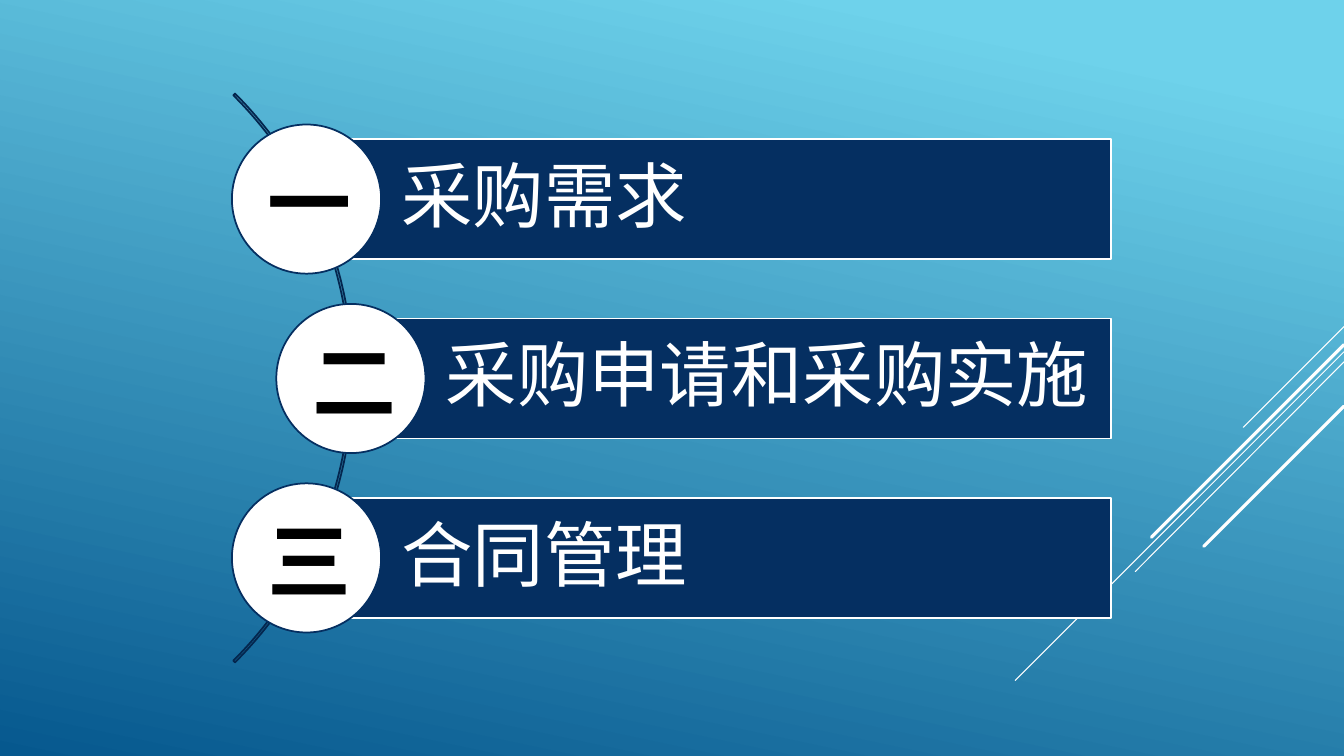
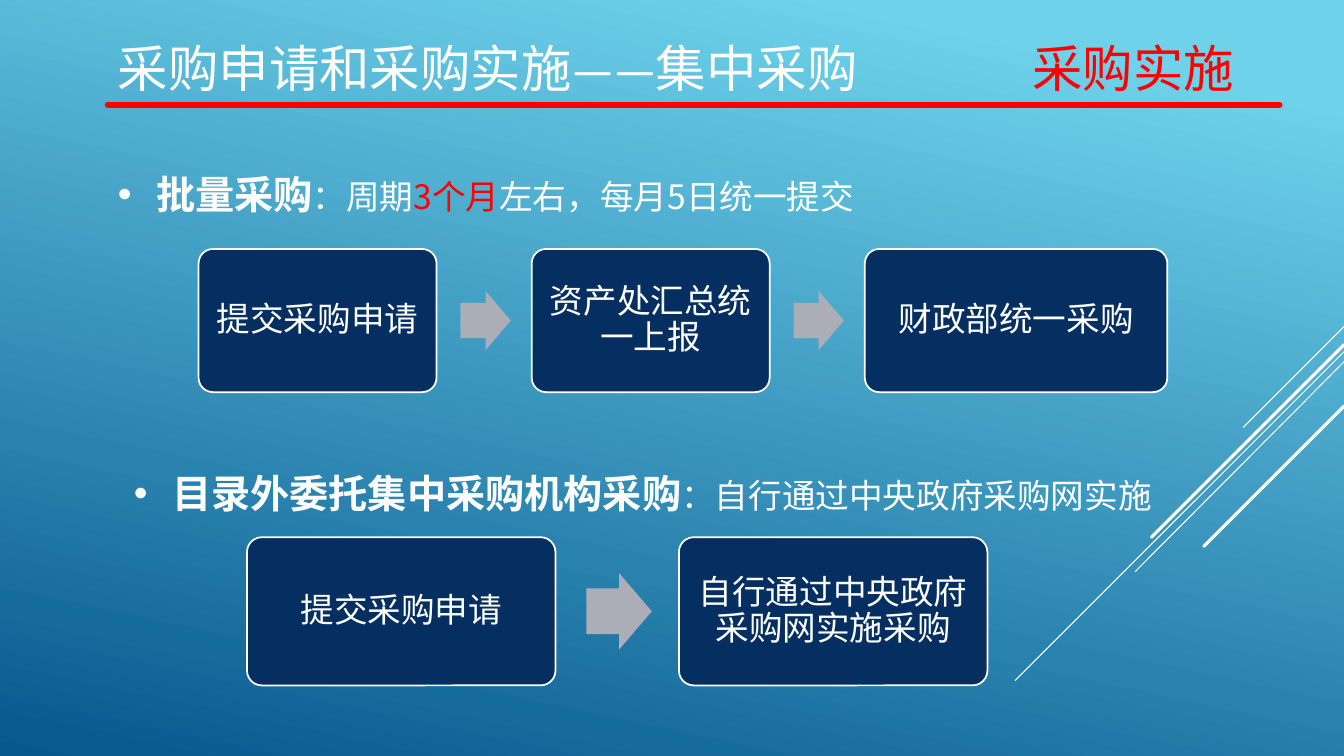
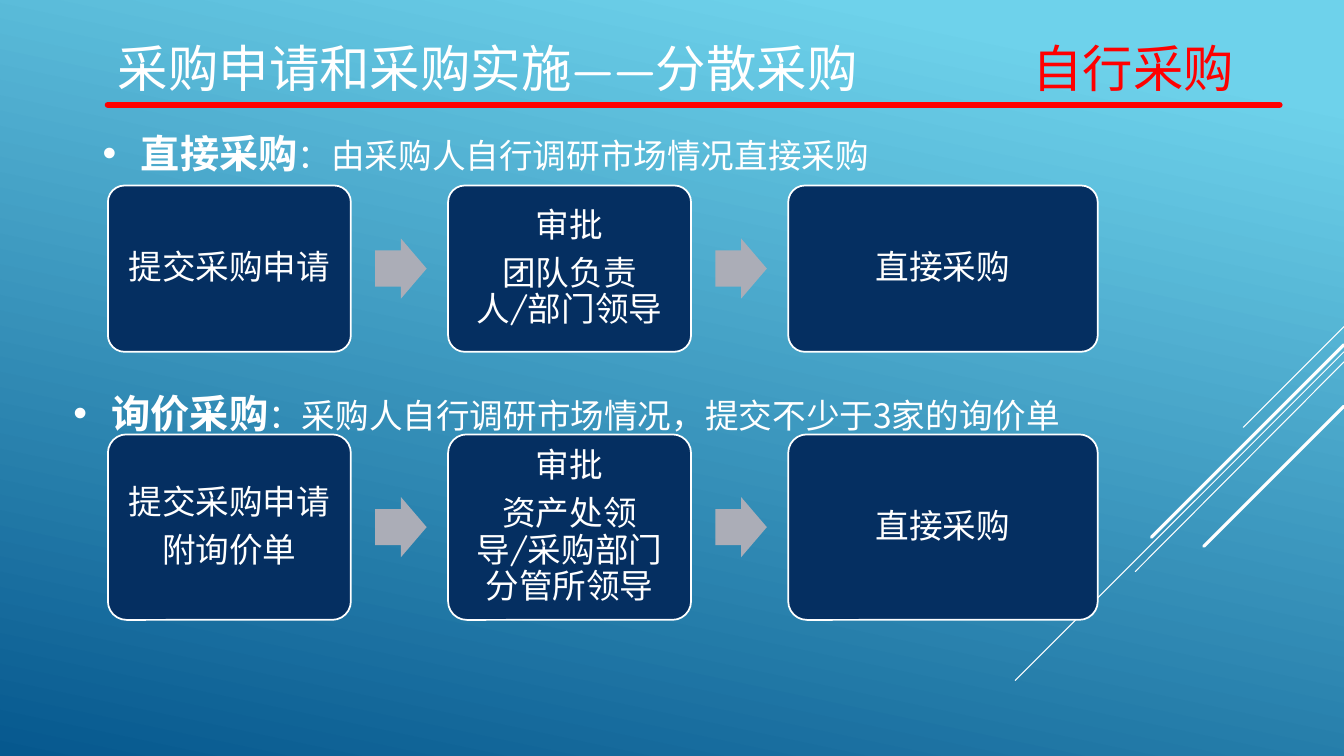
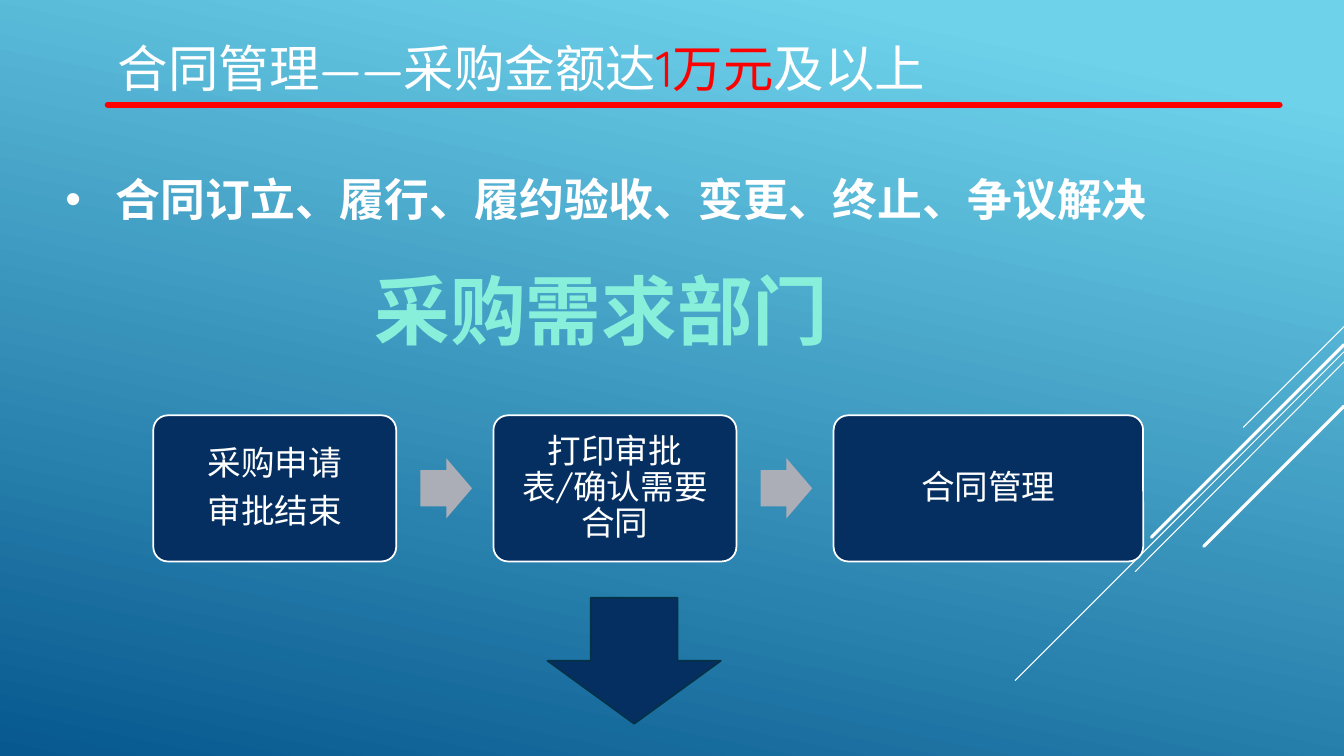
from lxml import etree
from pptx import Presentation
from pptx.dml.color import RGBColor
from pptx.enum.shapes import MSO_CONNECTOR, MSO_SHAPE
from pptx.enum.text import MSO_ANCHOR, MSO_AUTO_SIZE, PP_ALIGN
from pptx.oxml.ns import qn
from pptx.util import Pt

PX = 9144  # 100 px to the inch
WIDTH, HEIGHT = 1333, 750
HEADING_FONT, BODY_FONT = "Quicksand", "Noto Sans CJK SC"
COLORS = {
    "sky": "6ED2EB", "deep": "06588E", "navy": "052F61", "arc": "04264E",
    "white": "FFFFFF", "black": "000000", "red": "FF0000",
    "grey": "ABADB7", "mint": "87EFDA", "edge": "043148",
}
LEFT, CENTER, JUSTIFY = PP_ALIGN.LEFT, PP_ALIGN.CENTER, PP_ALIGN.JUSTIFY
TOP, MIDDLE = MSO_ANCHOR.TOP, MSO_ANCHOR.MIDDLE
STRAIGHT = MSO_CONNECTOR.STRAIGHT
GROW = MSO_AUTO_SIZE.SHAPE_TO_FIT_TEXT
RECT, ROUNDED, OVAL = MSO_SHAPE.RECTANGLE, MSO_SHAPE.ROUNDED_RECTANGLE, MSO_SHAPE.OVAL
ARC = MSO_SHAPE.BLOCK_ARC
RIGHT_ARROW, DOWN_ARROW = MSO_SHAPE.RIGHT_ARROW, MSO_SHAPE.DOWN_ARROW

# start y, end x, end y, weight; all begin at the right edge
RAYS = [(324, 1233, 424, 0.75), (349, 1007, 675, 0.75), (359, 1126, 567, 0.75),
        (342, 1142, 533, 2.25), (403, 1194, 542, 2.25)]


def emu(*lengths):
    return [round(length * PX) for length in lengths]


def rgb(name):
    return RGBColor.from_string(COLORS[name])


def write(shape, *paragraphs, size, color="white", bold=False, font=HEADING_FONT,
          align=LEFT, anchor=TOP, insets=(10, 5, 10, 5), spacing=None, after=0,
          bullet=0, tab=0, wrap=True, grow=False):
    """Each paragraph is a string or a list of runs; a run is a string or (string, changes)."""
    frame = shape.text_frame
    frame.word_wrap = wrap
    frame.vertical_anchor = anchor
    if grow:
        frame.auto_size = GROW
    (frame.margin_left, frame.margin_top,
     frame.margin_right, frame.margin_bottom) = emu(*insets)
    for index, runs in enumerate(paragraphs):
        paragraph = frame.add_paragraph() if index else frame.paragraphs[0]
        paragraph.alignment = align
        paragraph.space_after = Pt(after)
        if spacing:
            paragraph.line_spacing = spacing
        properties = paragraph._p.get_or_add_pPr()
        if bullet:
            properties.set("marL", str(bullet * PX))
            properties.set("indent", str(-bullet * PX))
            etree.SubElement(properties, qn("a:buFont"), typeface="Arial")
            etree.SubElement(properties, qn("a:buChar"), char="•")
        if tab:
            stops = etree.SubElement(properties, qn("a:tabLst"))
            etree.SubElement(stops, qn("a:tab"), pos=str(tab * PX), algn="l")
        for part in [runs] if isinstance(runs, str) else runs:
            words, changes = (part, {}) if isinstance(part, str) else part
            run = paragraph.add_run()
            run.text = words
            run.font.size = Pt(changes.get("size", size))
            run.font.bold = changes.get("bold", bold)
            run.font.color.rgb = rgb(changes.get("color", color))
            run.font.name = font
            etree.SubElement(run._r.get_or_add_rPr(), qn("a:ea"), typeface=font)


def add_text(slide, box, *paragraphs, **style):
    write(slide.shapes.add_textbox(*emu(*box)), *paragraphs, **style)


def add_shape(slide, kind, box, fill=None, line=None, adjustments=()):
    shape = slide.shapes.add_shape(kind, *emu(*box))
    shape.shadow.inherit = False
    for index, value in enumerate(adjustments):
        shape.adjustments[index] = value
    if fill:
        shape.fill.solid()
        shape.fill.fore_color.rgb = rgb(fill)
    else:
        shape.fill.background()
    if line:
        shape.line.color.rgb = rgb(line)
        shape.line.width = Pt(1.25)
    else:
        shape.line.fill.background()
    return shape


def add_line(slide, start, end, color, weight):
    connector = slide.shapes.add_connector(STRAIGHT, *emu(*start, *end))
    connector.line.color.rgb = rgb(color)
    connector.line.width = Pt(weight)
    connector.line._get_or_add_ln().set("cap", "rnd")
    etree.SubElement(connector._element.spPr, qn("a:effectLst"))


def paint_background(master):
    fill = master.background.fill
    fill.gradient()
    fill.gradient_angle = 258
    for stop, position, name in zip(fill.gradient_stops, (0.1, 1), ("sky", "deep")):
        stop.position = position
        stop.color.rgb = rgb(name)


def new_slide(prs, title=None):
    """Blank slide with the rays and, if given, a title over its red rule."""
    slide = prs.slides.add_slide(prs.slide_layouts[6])
    for y, end_x, end_y, weight in RAYS:
        add_line(slide, (WIDTH, y), (end_x, end_y), "white", weight)
    if title:
        add_text(slide, (107, 12, 1178, 109), title, size=36, anchor=MIDDLE, tab=907)
        add_line(slide, (107, 104), (1269, 104), "red", 4.5)
    return slide


def add_bullet(slide, box, runs, size=24, bold=False, indent=38):
    add_text(slide, box, runs, size=size, bold=bold, font=BODY_FONT, align=JUSTIFY,
             spacing=1.5, bullet=indent, grow=True)


def lead(words):
    return words, {"size": 28, "bold": True}


def red(words):
    return words, {"color": "red"}


def add_flow(slide, x, y, width, height, steps, last_width):
    """Row of step boxes; gaps and arrows are in proportion to the box width."""
    arrow_width, arrow_height = 0.212 * width, 0.248 * width
    for index, paragraphs in enumerate(steps):
        left = x + index * 1.4 * width
        is_last = index == len(steps) - 1
        step_width = last_width if is_last else width
        step = add_shape(slide, ROUNDED, (left, y, step_width, height),
                         "navy", "white", [0.1])
        write(step, *paragraphs, size=24, align=CENTER, anchor=MIDDLE,
              insets=(10, 10, 10, 10), spacing=0.9, after=8.4)
        if not is_last:
            arrow_top = y + (height - arrow_height) / 2
            add_shape(slide, RIGHT_ARROW,
                      (left + 1.1 * width, arrow_top, arrow_width, arrow_height),
                      "grey", adjustments=[0.6, 0.5])


def add_agenda(slide):
    bar_right, bar_height, diameter = 1102, 119, 148
    add_shape(slide, ARC, (-448, -24, 798, 798), line="arc", adjustments=[189, 27, 0.003])
    items = [("一", "采购需求", 304), ("二", "采购申请和采购实施", 348), ("三", "合同管理", 304)]
    for index, (numeral, topic, left) in enumerate(items):
        top = 138 + 178 * index
        bar = add_shape(slide, RECT, (left, top, bar_right - left, bar_height),
                        "navy", "white")
        write(bar, topic, size=51, anchor=MIDDLE, insets=(94, 14, 14, 14),
              spacing=0.9, after=17.85)
        circle_top = top + (bar_height - diameter) / 2
        add_shape(slide, OVAL, (left - diameter / 2, circle_top, diameter, diameter),
                  "white", "navy")
        add_text(slide, (left - 48, top + 6, 83, 111), numeral, size=60, color="black",
                 bold=True, grow=True)


def add_central_purchase(prs):
    slide = new_slide(prs, ["采购申请和采购实施——集中采购\t", red("采购实施")])
    add_bullet(slide, (107, 141, 821, 74),
               [lead("批量采购"), "：周期", red("3个月"), "左右，每月5日统一提交"])
    add_flow(slide, 197, 247, 236, 142,
             [["提交采购申请"], ["资产处汇总统一上报"], ["财政部统一采购"]], 300)
    add_bullet(slide, (123, 437, 1146, 74),
               [lead("目录外委托集中采购机构采购"), "：自行通过中央政府采购网实施"])
    add_flow(slide, 245, 533, 306, 147,
             [["提交采购申请"], ["自行通过中央政府采购网实施采购"]], 306)


def add_own_purchase(prs):
    slide = new_slide(prs, ["采购申请和采购实施——分散采购\t", red("自行采购")])
    add_bullet(slide, (92, 100, 821, 74),
               [lead("直接采购"), "：由采购人自行调研市场情况直接采购"])
    add_flow(slide, 107, 184, 241, 165,
             [["提交采购申请"], ["审批", "团队负责人/部门领导"], ["直接采购"]], 307)
    add_bullet(slide, (63, 358, 1146, 74),
               [lead("询价采购"), "：采购人自行调研市场情况，提交不少于3家的询价单"])
    add_flow(slide, 107, 431, 241, 184,
             [["提交采购申请", "附询价单"], ["审批", "资产处领导/采购部门分管所领导"],
              ["直接采购"]], 307)


def add_contract(prs):
    slide = new_slide(prs, ["合同管理——采购金额达", red("1万元"), "及以上"])
    add_bullet(slide, (55, 139, 1223, 83), "合同订立、履行、履约验收、变更、终止、争议解决",
               size=32, bold=True, indent=50)
    add_text(slide, (358, 257, 477, 101), "采购需求部门", size=54, color="mint", bold=True,
             align=CENTER, wrap=False, grow=True)
    add_flow(slide, 152, 412, 241, 145,
             [["采购申请", "审批结束"], ["打印审批表/确认需要合同"], ["合同管理"]], 307)
    add_shape(slide, DOWN_ARROW, (543, 593, 172, 125), "navy", "edge")


def main():
    prs = Presentation()
    prs.slide_width, prs.slide_height = emu(WIDTH, HEIGHT)
    paint_background(prs.slide_master)
    add_agenda(new_slide(prs))
    add_central_purchase(prs)
    add_own_purchase(prs)
    add_contract(prs)
    prs.save("out.pptx")


if __name__ == "__main__":
    main()
